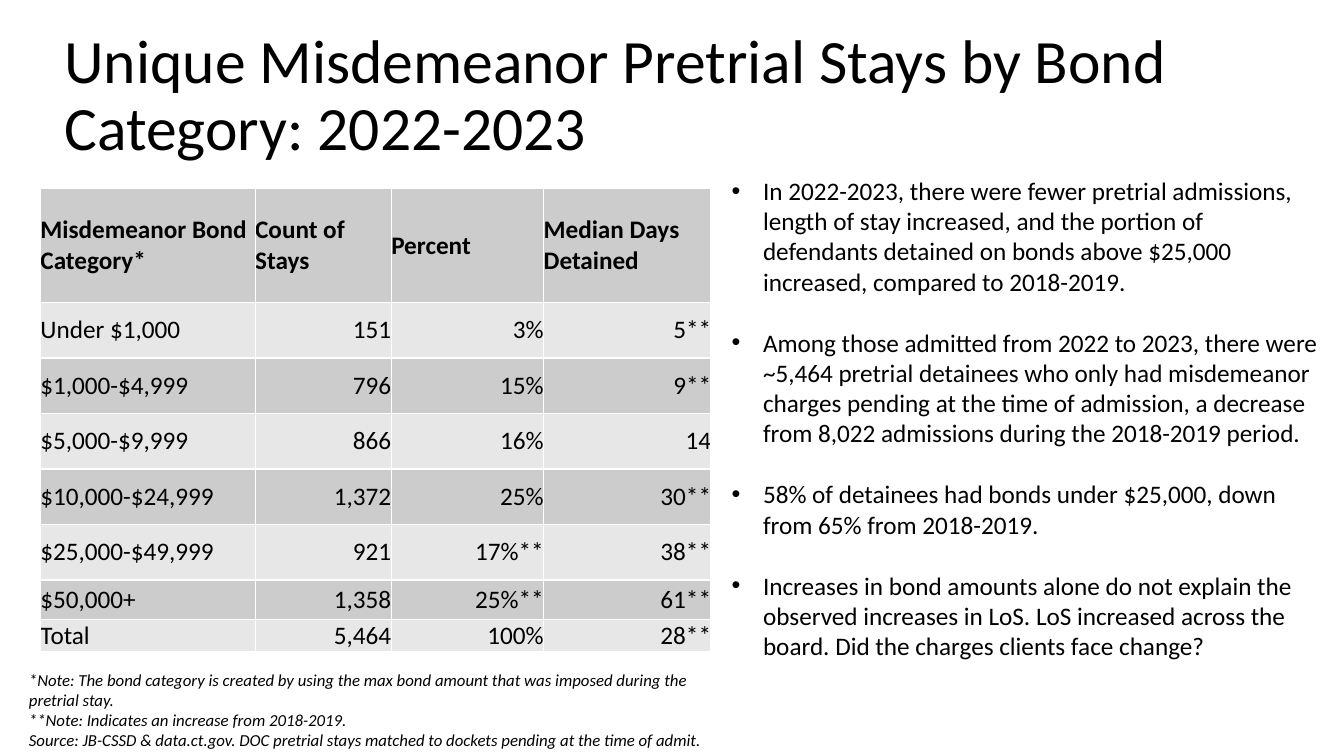
from lxml import etree
from pptx import Presentation
from pptx import util as u
from pptx.dml.color import RGBColor
from pptx.enum import text
from pptx.oxml.ns import qn

FONT = "Calibri"
BLACK, WHITE = "000000", "FFFFFF"
BANDS = ["CCCCCC", "E7E7E7"]

TITLE = "Unique Misdemeanor Pretrial Stays by Bond Category: 2022-2023"
ROWS = [
    ("Misdemeanor Bond Category*", "Count of Stays", "Percent", "Median Days Detained"),
    ("Under $1,000", "151", "3%", "5**"),
    ("$1,000-$4,999", "796", "15%", "9**"),
    ("$5,000-$9,999", "866", "16%", "14"),
    ("$10,000-$24,999", "1,372", "25%", "30**"),
    ("$25,000-$49,999", "921", "17%**", "38**"),
    ("$50,000+", "1,358", "25%**", "61**"),
    ("Total", "5,464", "100%", "28**"),
]
COLUMN_WIDTHS = [5.41, 3.43, 3.84, 4.22]
ROW_HEIGHTS = [2.87] + [1.4] * 5 + [0.99, 0.81]
FINDINGS = [
    "In 2022-2023, there were fewer pretrial admissions, length of stay increased, and the portion of "
    "defendants detained on bonds above $25,000 increased, compared to 2018-2019.",
    "Among those admitted from 2022 to 2023, there were ~5,464 pretrial detainees who only had misdemeanor "
    "charges pending at the time of admission, a decrease from 8,022 admissions during the 2018-2019 period.",
    "58% of detainees had bonds under $25,000, down from 65% from 2018-2019.",
    "Increases in bond amounts alone do not explain the observed increases in LoS. LoS increased across the "
    "board. Did the charges clients face change?",
]
NOTES = [
    "*Note: The bond category is created by using the max bond amount that was imposed during the pretrial stay.",
    "**Note: Indicates an increase from 2018-2019.",
    "Source: JB-CSSD & data.ct.gov. DOC pretrial stays matched to dockets pending at the time of admit.",
]


def color(value):
    return RGBColor.from_string(value)


def add_bullet(paragraph):
    properties = paragraph._p.get_or_add_pPr()
    properties.set("marL", str(u.Cm(0.79)))
    properties.set("indent", str(-u.Cm(0.79)))
    etree.SubElement(properties, qn("a:buFont"), typeface="Arial")
    etree.SubElement(properties, qn("a:buChar"), char="•")


def write(frame, lines, size=18, bold=False, italic=False, align=text.PP_ALIGN.LEFT,
          bullet=False, gap=0, spacing=None):
    frame.word_wrap = True
    for index, line in enumerate(lines):
        paragraph = frame.add_paragraph() if index else frame.paragraphs[0]
        if bullet:
            add_bullet(paragraph)
        paragraph.alignment = align
        if spacing:
            paragraph.line_spacing = spacing
        if index and gap:
            paragraph.space_before = u.Pt(gap)
        run = paragraph.add_run()
        run.text = line
        run.font.name, run.font.size = FONT, u.Pt(size)
        run.font.bold, run.font.italic = bold, italic
        run.font.color.rgb = color(BLACK)


def set_borders(cell):
    properties = cell._tc.get_or_add_tcPr()
    for position, side in enumerate(("lnL", "lnR", "lnT", "lnB")):
        line = etree.Element(qn(f"a:{side}"), w=str(u.Pt(1)))
        fill = etree.SubElement(line, qn("a:solidFill"))
        etree.SubElement(fill, qn("a:srgbClr"), val=WHITE)
        properties.insert(position, line)


def add_stays_table(slide):
    table = slide.shapes.add_table(
        len(ROWS), len(COLUMN_WIDTHS), u.Cm(1.02), u.Cm(4.75),
        u.Cm(sum(COLUMN_WIDTHS)), u.Cm(sum(ROW_HEIGHTS))).table
    for column, width in zip(table.columns, COLUMN_WIDTHS):
        column.width = u.Cm(width)
    for row, height in zip(table.rows, ROW_HEIGHTS):
        row.height = u.Cm(height)
    for row_index, row in enumerate(ROWS):
        for column_index, value in enumerate(row):
            cell = table.cell(row_index, column_index)
            cell.margin_left = cell.margin_right = cell.margin_top = cell.margin_bottom = 0
            cell.vertical_anchor = text.MSO_ANCHOR.MIDDLE
            cell.fill.solid()
            cell.fill.fore_color.rgb = color(BANDS[row_index % 2])
            set_borders(cell)
            is_number = row_index > 0 and column_index > 0
            write(cell.text_frame, [value], bold=row_index == 0,
                  align=text.PP_ALIGN.RIGHT if is_number else text.PP_ALIGN.LEFT)


def main():
    presentation = Presentation()
    presentation.slide_width, presentation.slide_height = u.Cm(33.87), u.Cm(19.05)
    slide = presentation.slides.add_slide(presentation.slide_layouts[5])

    title = slide.shapes.title
    title.left, title.top, title.width, title.height = u.Cm(1.37), u.Cm(0.61), u.Cm(29.21), u.Cm(3.68)
    title.text_frame.auto_size = text.MSO_AUTO_SIZE.NONE
    title.text_frame.vertical_anchor = text.MSO_ANCHOR.MIDDLE
    write(title.text_frame, [TITLE], size=44, spacing=0.9)

    notes = slide.shapes.add_textbox(u.Cm(0.48), u.Cm(16.74), u.Cm(17.7), u.Cm(2.31))
    write(notes.text_frame, NOTES, size=12, italic=True)

    findings = slide.shapes.add_textbox(u.Cm(18.19), u.Cm(4.29), u.Cm(15.42), u.Cm(12.7))
    write(findings.text_frame, FINDINGS, bullet=True, gap=22)

    add_stays_table(slide)
    presentation.save("out.pptx")


if __name__ == "__main__":
    main()
